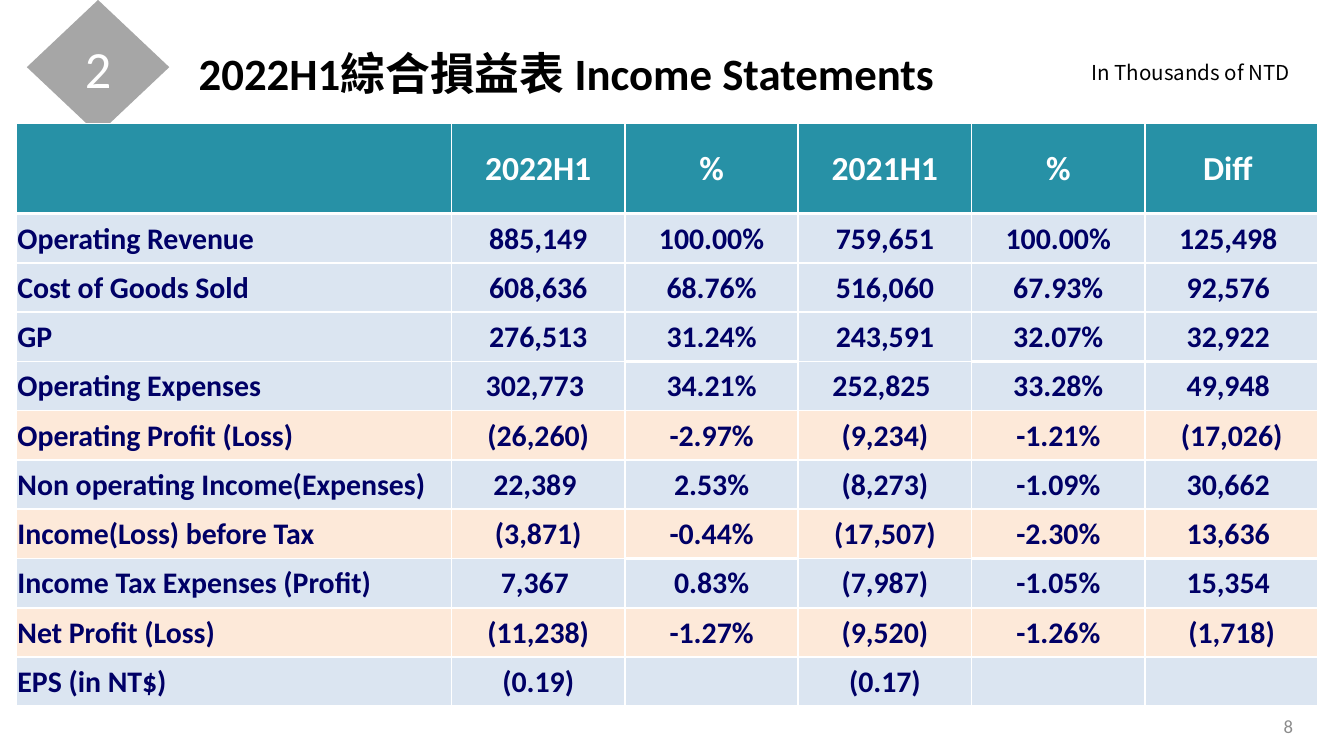
from dataclasses import dataclass

from lxml import etree
from pptx import Presentation
from pptx.dml.color import RGBColor
from pptx.enum.shapes import MSO_SHAPE
from pptx.enum.text import MSO_ANCHOR, PP_ALIGN
from pptx.oxml.ns import qn
from pptx.util import Inches, Pt

DIAMOND = MSO_SHAPE.DIAMOND
TOP, MIDDLE = MSO_ANCHOR.TOP, MSO_ANCHOR.MIDDLE
LEFT, CENTER, RIGHT = PP_ALIGN.LEFT, PP_ALIGN.CENTER, PP_ALIGN.RIGHT


@dataclass(frozen=True)
class Theme:
    font: str = "Calibri"
    cjk_font: str = "Noto Sans CJK SC"
    white: str = "FFFFFF"
    black: str = "000000"
    number: str = "8C8C8C"
    badge: str = "A6A6A6"
    header: str = "2791A6"
    row: str = "DBE5F1"
    highlight: str = "FDE9D9"
    cell_text: str = "000066"
    badge_size: int = 28
    title_size: int = 24
    header_size: int = 18
    cell_size: int = 16
    unit_size: int = 11
    number_size: int = 10
    thin_line: float = 1
    thick_line: float = 1.5


THEME = Theme()

STATEMENT = [
    ["", "2022H1", "%", "2021H1", "%", "Diff "],
    ["Operating Revenue", "885,149", "100.00%", "759,651", "100.00%", "125,498 "],
    ["Cost of Goods Sold", "608,636", "68.76%", "516,060", "67.93%", "92,576 "],
    ["GP", "276,513", "31.24%", "243,591", "32.07%", "32,922 "],
    ["Operating Expenses", "302,773 ", "34.21%", "252,825 ", "33.28%", "49,948 "],
    ["Operating Profit (Loss)", "(26,260)", "-2.97%", "(9,234)", "-1.21%", "(17,026)"],
    ["Non operating Income(Expenses)", "22,389 ", "2.53%", "(8,273)", "-1.09%", "30,662 "],
    ["Income(Loss) before Tax", "(3,871)", "-0.44%", "(17,507)", "-2.30%", "13,636 "],
    ["Income Tax Expenses (Profit)", "7,367 ", "0.83%", "(7,987)", "-1.05%", "15,354 "],
    ["Net Profit (Loss)", "(11,238)", "-1.27%", "(9,520)", "-1.26%", "(1,718)"],
    ["EPS (in NT$)", "(0.19)", "", "(0.17)", "", ""],
]
COLUMN_WIDTHS = [3.24] + [1.29] * 5
TABLE_HEIGHT, HEADER_HEIGHT, LAST_HEIGHT = 4.33, 0.67, 0.36
ROW_HEIGHT = (TABLE_HEIGHT - HEADER_HEIGHT - LAST_HEIGHT) / 9
ROW_HEIGHTS = [HEADER_HEIGHT] + [ROW_HEIGHT] * 9 + [LAST_HEIGHT]
HIGHLIGHT_ROWS = {5, 7, 9}
ALL_COLUMNS = {0, 1, 2, 3, 4, 5}
RATIO_COLUMNS = {2, 4, 5}
THICK_BELOW = {
    0: ALL_COLUMNS,
    1: ALL_COLUMNS,
    2: ALL_COLUMNS - {0},
    3: RATIO_COLUMNS,
    5: RATIO_COLUMNS,
    7: RATIO_COLUMNS,
}


def write_text(frame, text, size, color, bold=False, align=LEFT, font=THEME.font):
    paragraph = frame.paragraphs[0]
    paragraph.alignment = align
    if text:
        run = paragraph.add_run()
        run.text = text
        run.font.size = Pt(size)
        run.font.bold = bold
        run.font.name = font
        run.font.color.rgb = RGBColor.from_string(color)
        if font == THEME.cjk_font:
            properties = run.font._element
            etree.SubElement(properties, qn("a:ea"), typeface=font)


def add_text_box(slide, left, top, width, height, anchor=TOP):
    box = slide.shapes.add_textbox(
        Inches(left), Inches(top), Inches(width), Inches(height)
    )
    frame = box.text_frame
    frame.word_wrap = True
    frame.vertical_anchor = anchor
    return frame


def add_badge(slide, text):
    shape = slide.shapes.add_shape(
        DIAMOND, Inches(0.2), Inches(0), Inches(1.06), Inches(1)
    )
    shape.shadow.inherit = False
    shape.fill.solid()
    shape.fill.fore_color.rgb = RGBColor.from_string(THEME.badge)
    shape.line.fill.background()
    shape.text_frame.vertical_anchor = MIDDLE
    write_text(shape.text_frame, text, THEME.badge_size, THEME.white, align=CENTER)


def add_title(slide):
    frame = add_text_box(slide, 1.38, 0.29, 7.95, 0.53)
    parts = [
        ("2022H1", THEME.font),
        ("綜合損益表 ", THEME.cjk_font),
        ("Income Statements", THEME.font),
    ]
    for text, font in parts:
        write_text(frame, text, THEME.title_size, THEME.black, bold=True, font=font)


def set_borders(cell, top, bottom):
    properties = cell._tc.get_or_add_tcPr()
    widths = {"L": THEME.thin_line, "R": THEME.thin_line, "T": top, "B": bottom}
    for index, (side, width) in enumerate(widths.items()):
        line = etree.Element(qn(f"a:ln{side}"), w=str(int(Pt(width))))
        fill = etree.SubElement(line, qn("a:solidFill"))
        etree.SubElement(fill, qn("a:srgbClr"), val=THEME.white)
        properties.insert(index, line)


def line_below(row, column):
    thick = column in THICK_BELOW.get(row, ())
    return THEME.thick_line if thick else THEME.thin_line


def format_cell(cell, text, row, column):
    cell.margin_left = cell.margin_right = cell.margin_top = Inches(0.01)
    cell.margin_bottom = Inches(0)
    cell.vertical_anchor = MIDDLE
    if row == 0:
        fill, color, size = THEME.header, THEME.white, THEME.header_size
    else:
        fill = THEME.highlight if row in HIGHLIGHT_ROWS else THEME.row
        color, size = THEME.cell_text, THEME.cell_size
    cell.fill.solid()
    cell.fill.fore_color.rgb = RGBColor.from_string(fill)
    align = CENTER if column else LEFT
    write_text(cell.text_frame, text, size, color, bold=True, align=align)
    set_borders(cell, line_below(row - 1, column), line_below(row, column))


def add_statement_table(slide):
    table = slide.shapes.add_table(
        len(ROW_HEIGHTS), len(COLUMN_WIDTHS),
        Inches(0.12), Inches(0.92),
        Inches(sum(COLUMN_WIDTHS)), Inches(TABLE_HEIGHT),
    ).table
    for column, width in zip(table.columns, COLUMN_WIDTHS):
        column.width = Inches(width)
    for row, height in zip(table.rows, ROW_HEIGHTS):
        row.height = Inches(height)
    for row, values in enumerate(STATEMENT):
        for column, text in enumerate(values):
            format_cell(table.cell(row, column), text, row, column)


def main():
    presentation = Presentation()
    presentation.slide_width = Inches(10)
    presentation.slide_height = Inches(10 * 9 / 16)
    slide = presentation.slides.add_slide(presentation.slide_layouts[6])

    number = add_text_box(slide, 7.39, 5.25, 2.33, 0.3, anchor=MIDDLE)
    write_text(number, "8", THEME.number_size, THEME.number, align=RIGHT)
    add_badge(slide, "2")
    add_title(slide)
    add_statement_table(slide)
    unit = add_text_box(slide, 8.02, 0.4, 1.8, 0.29)
    write_text(unit, "In Thousands of NTD", THEME.unit_size, THEME.black,
               font=THEME.cjk_font)

    presentation.save("out.pptx")


if __name__ == "__main__":
    main()
